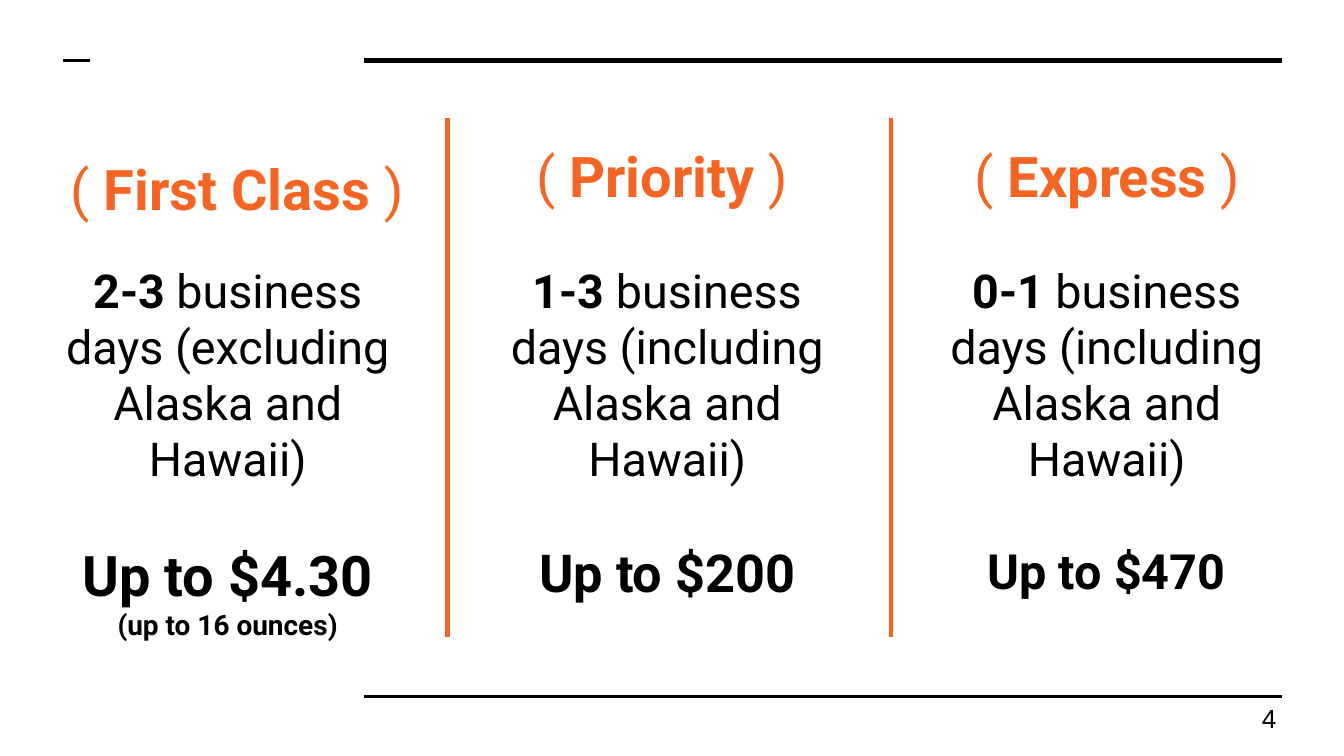
from lxml import etree
from pptx import Presentation
from pptx import util as u
from pptx.dml.color import RGBColor
from pptx.enum import shapes, text
from pptx.oxml.ns import qn

PX = 9144
COLORS = {"ink": "000000", "accent": "F46524", "paper": "FFFFFF"}
CENTER = text.PP_ALIGN.CENTER

COLUMNS = [
    {"head_box": (38, 68, 277, 100), "body_box": (31, 185, 277, 297),
     "name": " First Class ", "tail": [(")", 30, False), (" ", 48, True)],
     "days": "2-3", "region": "excluding",
     "prices": [("Up to $4.30", 30), ("(up to 16 ounces)", 15)]},
    {"head_box": (353, 88, 290, 100), "body_box": (358, 185, 277, 297),
     "name": " Priority ", "tail": [(") ", 30, False)],
     "days": "1-3", "region": "including",
     "prices": [("Up to $200", 28)]},
    {"head_box": (679, 88, 290, 80), "body_box": (685, 185, 277, 297),
     "name": " Express ", "tail": [(")", 30, False)],
     "days": "0-1", "region": "including",
     "prices": [("Up to $470", 26)]},
]


def px(n):
    return u.Emu(n * PX)


def rgb(name):
    return RGBColor.from_string(COLORS[name])


def add_line(s, x1, y1, x2, y2, color, weight):
    ln = s.shapes.add_connector(shapes.MSO_CONNECTOR.STRAIGHT,
                                px(x1), px(y1), px(x2), px(y2))
    ln.line.color.rgb = rgb(color)
    ln.line.width = u.Pt(weight)
    etree.SubElement(ln._element.spPr, qn("a:effectLst"))


def add_text_box(s, box):
    tf = s.shapes.add_textbox(*map(px, box)).text_frame
    tf.word_wrap = True
    tf.margin_left = tf.margin_right = tf.margin_top = tf.margin_bottom = px(10)
    return tf


def add_runs(p, runs, color="ink", font="Roboto"):
    for words, size, bold in runs:
        r = p.add_run()
        r.text = words
        r.font.name = font
        r.font.size = u.Pt(size)
        r.font.bold = bold
        r.font.color.rgb = rgb(color)


def add_heading(s, box, name, tail):
    p = add_text_box(s, box).paragraphs[0]
    p.alignment = CENTER
    p.line_spacing = 1.15
    add_runs(p, [("(", 30, False), (name, 30, True)] + tail, "accent")


def add_details(s, box, days, region, prices):
    tf = add_text_box(s, box)
    p = tf.paragraphs[0]
    p.alignment = CENTER
    add_runs(p, [(days, 25, True),
                 (f" business days ({region} Alaska and Hawaii)", 25, False)])
    for i, (words, size) in enumerate(prices):
        p = tf.add_paragraph()
        p.alignment = CENTER
        p.space_before = u.Pt(0 if i else 29.3)
        add_runs(p, [(words, size, True)])


def add_frame(s, left, top, right, bottom):
    add_line(s, left + 224, top, right, top, "ink", 3)
    add_line(s, left + 224, bottom, right, bottom, "ink", 1.5)
    add_line(s, left, top, left + 20, top, "ink", 1.5)


def add_page_number(s, box, number):
    tf = add_text_box(s, box)
    tf.vertical_anchor = text.MSO_ANCHOR.MIDDLE
    add_runs(tf.paragraphs[0], [(number, 14, False)], font="Arial")


def main():
    prs = Presentation()
    prs.slide_width, prs.slide_height = px(1000), u.Inches(5.625)
    s = prs.slides.add_slide(prs.slide_layouts[6])
    s.background.fill.solid()
    s.background.fill.fore_color.rgb = rgb("paper")
    add_frame(s, 47, 45, 954, 518)
    for col in COLUMNS:
        add_heading(s, col["head_box"], col["name"], col["tail"])
        add_details(s, col["body_box"], col["days"], col["region"], col["prices"])
    for x in (333, 663):
        add_line(s, x, 88, x, 474, "accent", 2.25)
    add_page_number(s, (929, 513, 60, 43), "4")
    prs.save("out.pptx")


if __name__ == "__main__":
    main()
